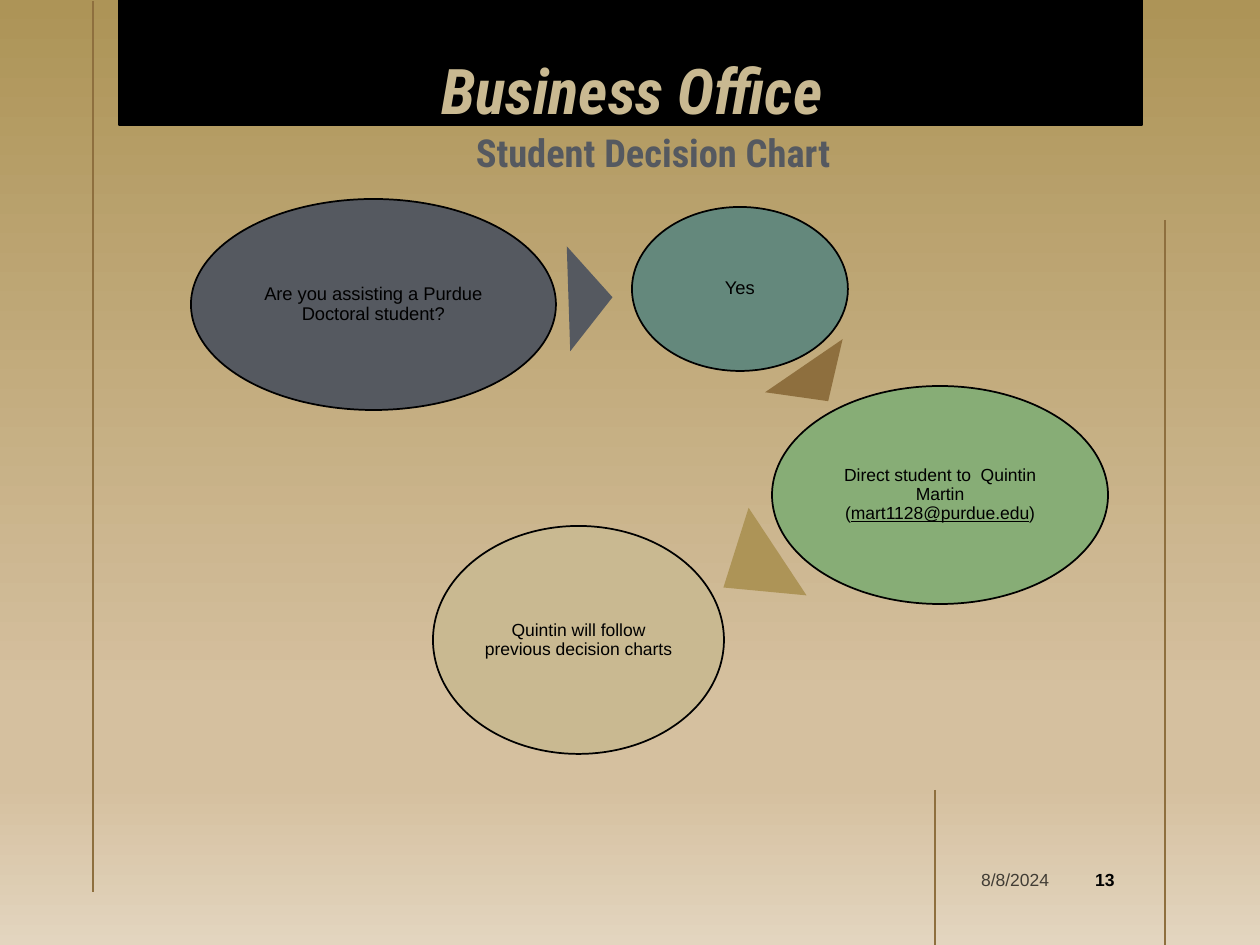
from lxml import etree
from pptx import Presentation
from pptx import util as u
from pptx.dml.color import RGBColor
from pptx.enum import shapes, text
from pptx.oxml.ns import qn

PX = 914400 / 126
COLORS = {
    "black": "000000", "gold": "AD9457", "sand": "D5C09F", "cream": "E3D5BF",
    "bronze": "8E6F3E", "tan": "C9B991", "slate": "555960",
    "teal": "64887C", "green": "87AD76",
}
BACKDROP = [(0, "gold"), (74, "sand"), (83, "sand"), (100, "cream")]
HEADING, BODY = "Roboto Condensed", "Arial"


def px(*values):
    return [u.Emu(round(value * PX)) for value in values]


def color(name):
    return RGBColor.from_string(COLORS[name])


class Painter:
    """Holds the style and the current page."""

    def __init__(self, page):
        self.page = page

    def background(self, stops):
        fill = self.page.background.fill
        fill.gradient()
        fill.gradient_angle = 270
        stop_list = self.page._element.find(".//" + qn("a:gsLst"))
        for old in list(stop_list):
            stop_list.remove(old)
        for position, name in stops:
            stop = etree.SubElement(stop_list, qn("a:gs"), pos=str(position * 1000))
            etree.SubElement(stop, qn("a:srgbClr"), val=COLORS[name])

    def shape(self, kind, box, fill=None, line=None, turn=0):
        item = self.page.shapes.add_shape(kind, *px(*box))
        item.shadow.inherit = False
        item.rotation = turn
        if fill:
            item.fill.solid()
            item.fill.fore_color.rgb = color(fill)
        else:
            item.fill.background()
        if line:
            item.line.color.rgb = color(line)
            item.line.width = u.Pt(1)
        else:
            item.line.fill.background()
        return item

    def rule(self, x, top, bottom):
        line = self.page.shapes.add_connector(
            shapes.MSO_CONNECTOR.STRAIGHT, *px(x, top, x, bottom))
        line.line.color.rgb = color("bronze")
        line.line.width = u.Pt(1)
        etree.SubElement(line._element.spPr, qn("a:effectLst"))

    def set_words(self, item, words, size, font=BODY, ink="black", bold=False,
                  italic=False, align=text.PP_ALIGN.CENTER, spacing=None,
                  anchor=text.MSO_ANCHOR.MIDDLE, inset=2):
        """Fill an item with one paragraph; words is a list of its runs."""
        frame = item.text_frame
        frame.word_wrap = True
        frame.vertical_anchor = anchor
        frame.margin_left, frame.margin_right = px(inset, inset)
        frame.margin_top, frame.margin_bottom = px(inset, inset)
        para = frame.paragraphs[0]
        para.alignment = align
        para.line_spacing = spacing
        for word in words:
            span = para.add_run()
            span.text = word
            span.font.name, span.font.size = font, u.Pt(size)
            span.font.bold, span.font.italic = bold, italic
            span.font.color.rgb = color(ink)
        return para.runs

    def label(self, box, words, size, **style):
        item = self.page.shapes.add_textbox(*px(*box))
        return self.set_words(item, [words], size, **style)

    def bubble(self, box, fill, words, size):
        item = self.shape(shapes.MSO_SHAPE.OVAL, box, fill, "black")
        return self.set_words(item, words, size, spacing=0.9)

    def pointer(self, box, fill, turn):
        self.shape(shapes.MSO_SHAPE.ISOSCELES_TRIANGLE, box, fill, turn=turn)


def main():
    deck = Presentation()
    deck.slide_width, deck.slide_height = px(1260, 945)
    painter = Painter(deck.slides.add_slide(deck.slide_layouts[6]))

    # Backdrop, header band and rules
    painter.background(BACKDROP)
    painter.shape(shapes.MSO_SHAPE.RECTANGLE, (119, 0, 1023, 125), "black", "black")
    for x, top, bottom in [(93, 1, 892), (935, 790, 945), (1165, 220, 945)]:
        painter.rule(x, top, bottom)

    # Headings
    heading = dict(font=HEADING, bold=True, anchor=text.MSO_ANCHOR.TOP, inset=0)
    painter.label((155, 60, 954, 71), "Business Office", 36, ink="tan",
                  italic=True, spacing=0.9, **heading)
    painter.label((176, 129, 954, 47), "Student Decision Chart", 22,
                  ink="slate", **heading)

    # Date and page number
    date, = painter.label((949, 857, 113, 44), "8/8/2024", 10,
                          align=text.PP_ALIGN.RIGHT, inset=13)
    ink = date._r.find(".//" + qn("a:srgbClr"))
    etree.SubElement(ink, qn("a:alpha"), val="70000")
    number = painter.shape(shapes.MSO_SHAPE.OVAL, (1080, 855, 50, 50))
    painter.set_words(number, ["13"], 10, bold=True)

    # Decision flow
    painter.bubble((191, 199, 365, 211), "slate",
                   ["Are you assisting a Purdue Doctoral student?"], 10.5)
    painter.pointer((538, 276, 105, 44), "slate", 88.1)
    painter.bubble((632, 207, 216, 164), "teal", ["Yes"], 10.5)
    painter.pointer((769, 362, 94, 43), "bronze", 145.6)
    contact = painter.bubble(
        (772, 386, 336, 218), "green",
        ["Direct student to  Quintin Martin (", "mart1128@purdue.edu", ")"], 10)
    contact[1].font.underline = True
    painter.pointer((698, 537, 105, 65), "gold", 236.5)
    painter.bubble((433, 526, 291, 228), "tan",
                   ["Quintin will follow previous decision charts"], 10)

    deck.save("out.pptx")


if __name__ == "__main__":
    main()
